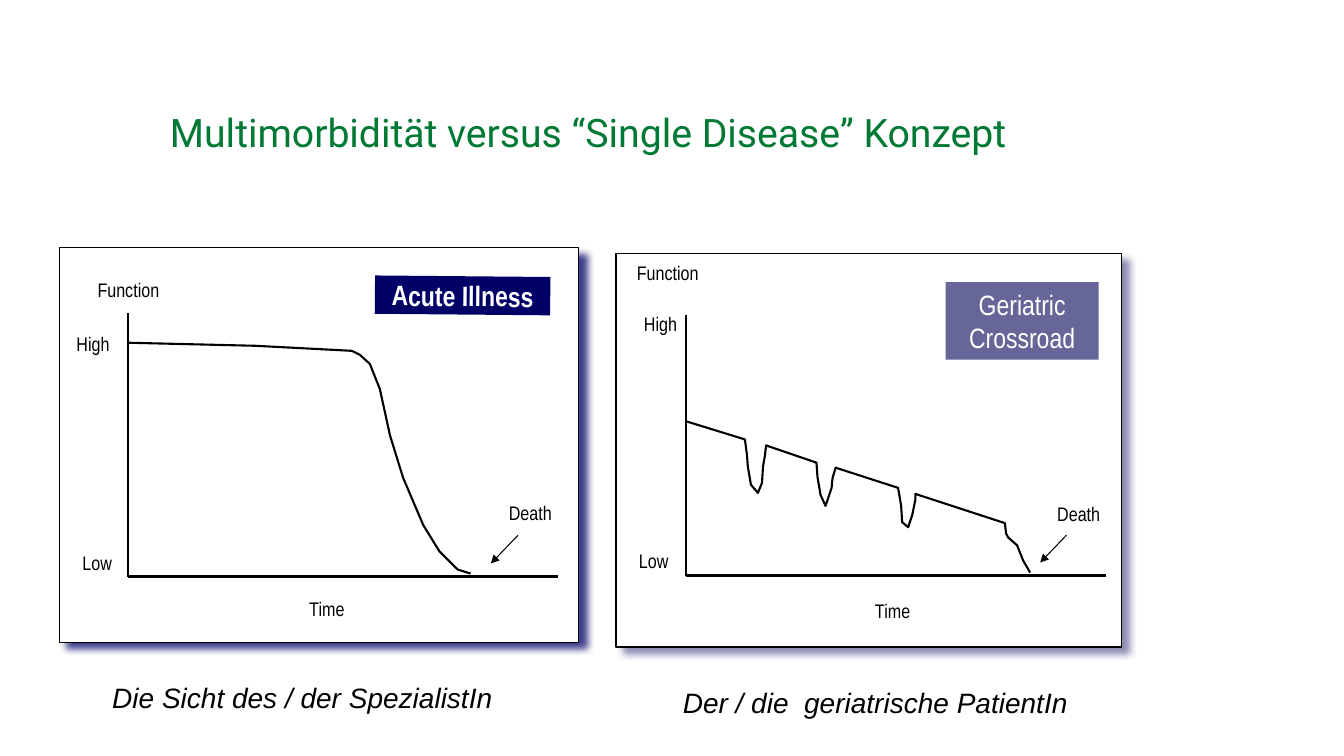
from pptx import Presentation
from pptx.dml.color import RGBColor
from pptx.enum.shapes import MSO_CONNECTOR, MSO_SHAPE
from pptx.enum.text import MSO_ANCHOR, PP_ALIGN
from pptx.oxml import parse_xml
from pptx.oxml.ns import nsdecls, qn
from pptx.util import Pt
from lxml import etree

RECT = MSO_SHAPE.RECTANGLE
STRAIGHT = MSO_CONNECTOR.STRAIGHT
CENTER, LEFT = PP_ALIGN.CENTER, PP_ALIGN.LEFT
TOP, MIDDLE = MSO_ANCHOR.TOP, MSO_ANCHOR.MIDDLE

COLORS = {"black": "000000", "white": "FFFFFF", "green": "007934",
          "navy": "000066", "violet": "666699"}


def set_text(sp, text, size, font, color, align=CENTER, anchor=TOP, wrap=True):
    tf = sp.text_frame
    tf.text = text
    tf.word_wrap = wrap
    tf.vertical_anchor = anchor
    p = tf.paragraphs[0]
    p.alignment = align
    r = p.runs[0]
    r.font.size = Pt(size)
    r.font.name = font
    r.font.color.rgb = RGBColor.from_string(COLORS[color])
    return r


def add_line(shapes, x1, y1, x2, y2, width):
    line = shapes.add_connector(STRAIGHT, Pt(x1), Pt(y1), Pt(x2), Pt(y2))
    line.line.color.rgb = RGBColor.from_string(COLORS["black"])
    line.line.width = Pt(width)
    etree.SubElement(line._element.spPr, qn("a:effectLst"))
    return line


prs = Presentation()
prs.slide_width, prs.slide_height = Pt(960), Pt(540)
s = prs.slides.add_slide(prs.slide_layouts[5])

# Title
title = s.shapes.title
title.left, title.top, title.width, title.height = Pt(68.4), Pt(72), Pt(703.4), Pt(43.2)
set_text(title, "Multimorbidität versus “Single Disease” Konzept", 28, "Roboto", "green",
         anchor=MIDDLE)
title.text_frame.paragraphs[0].line_spacing = Pt(34.8)

# The two charts of function over time: boxes are left, top, width, height
panels = [
    {"frame": (440, 181, 361.4, 281.2), "color": "violet",
     "axes": (490.3, 224.8, 411.1, 789.8),
     "curve": [(490.3, 301), (532.1, 313.9), (533.5, 324.7), (534.2, 333.4),
               (536.4, 346.3), (541.4, 352.1), (544.3, 344.9), (545, 333.4),
               (546.5, 324.7), (547.2, 318.2), (583.2, 330.5), (583.9, 340.6),
               (586.1, 353.5), (589.7, 361.4), (594, 348.5), (594.7, 341.3),
               (596.9, 334.1), (641.5, 348.5), (643.7, 361.4), (644.4, 373),
               (648.7, 376.6), (651.6, 367.9), (653.8, 357.1), (653.8, 352.8),
               (717.8, 373.7), (718.6, 381), (720, 383.8), (726.5, 389.5),
               (730.8, 400.3), (735.8, 409)],
     "labels": [("Function", 447.8, 182.9, 65.5), ("High", 452.9, 219.6, 42.5),
                ("Low", 449.3, 388.8, 39.6), ("Time", 617.8, 424.1, 44.6),
                ("Death", 748.1, 355, 50.4)],
     "arrow": (761.8, 382.3, 743, 401.8),
     "badge": ("Geriatric Crossroad", (675.4, 201.6, 109.4, 55.4), 0, False),
     "caption": ("Der / die  geriatrische PatientIn", (476.6, 486, 297.4, 31.7))},
    {"frame": (42.5, 177.1, 370.8, 281.5), "color": "navy",
     "axes": (91.4, 223.9, 411.8, 398.9),
     "curve": [(91.4, 244.8), (182.2, 247), (251.3, 250.6), (257, 253.4),
               (264.2, 259.9), (271.4, 277.9), (278.6, 311), (288, 341.3),
               (302.4, 375.1), (313.9, 393.8), (326.9, 406.8), (336.2, 409.7)],
     "labels": [("Function", 62.6, 195.1, 67.7), ("High", 47.5, 233.3, 43.9),
                ("Low", 51.8, 390.2, 41), ("Time", 213.8, 422.6, 45.4),
                ("Death", 356.4, 354.2, 51.8)],
     "arrow": (370.1, 382.3, 350.6, 402.5),
     "badge": ("Acute Illness", (267.8, 197.3, 125.3, 27.4), 0.5, True),
     "caption": ("Die Sicht des / der SpezialistIn", (61.9, 482.4, 308.2, 31.7))},
]

for panel in panels:
    shapes = s.shapes.add_group_shape().shapes

    # Frame with a coloured shadow
    frame = shapes.add_shape(RECT, *map(Pt, panel["frame"]))
    frame.fill.solid()
    frame.fill.fore_color.rgb = RGBColor.from_string(COLORS["white"])
    frame.line.color.rgb = RGBColor.from_string(COLORS["black"])
    frame.line.width = Pt(0.75)
    frame._element.spPr.append(parse_xml(
        f'<a:effectLst {nsdecls("a")}><a:outerShdw blurRad="{Pt(5)}" dist="{Pt(6.4)}" '
        f'dir="{39 * 60000}" algn="ctr" rotWithShape="0">'
        f'<a:srgbClr val="{COLORS[panel["color"]]}"><a:alpha val="75000"/></a:srgbClr>'
        '</a:outerShdw></a:effectLst>'))

    # Axes
    x, y_top, y_base, x_end = panel["axes"]
    add_line(shapes, x, y_top, x, y_base, 1.5)
    add_line(shapes, x, y_base, x_end, y_base, 1.5)

    # Function curve
    points = [(Pt(px), Pt(py)) for px, py in panel["curve"]]
    builder = shapes.build_freeform(*points[0])
    builder.add_line_segments(points[1:], close=False)
    curve = builder.convert_to_shape()
    curve.shadow.inherit = False
    curve.fill.background()
    curve.line.color.rgb = RGBColor.from_string(COLORS["black"])
    curve.line.width = Pt(1.5)

    # Labels
    for text, left, top, width in panel["labels"]:
        label = shapes.add_textbox(Pt(left), Pt(top), Pt(width), Pt(28.8))
        set_text(label, text, 14, "Arial Narrow", "black", LEFT, wrap=False)

    # Arrow from the word Death to the end of the curve
    arrow = add_line(shapes, *panel["arrow"], 0.75)
    etree.SubElement(arrow.line._get_or_add_ln(), qn("a:tailEnd"), type="triangle")

    # Badge
    text, box, rotation, bold = panel["badge"]
    badge = shapes.add_shape(RECT, *map(Pt, box))
    badge.rotation = rotation
    badge.shadow.inherit = False
    badge.fill.solid()
    badge.fill.fore_color.rgb = RGBColor.from_string(COLORS[panel["color"]])
    badge.line.fill.background()
    tf = badge.text_frame
    tf.margin_top = tf.margin_bottom = 0
    set_text(badge, text, 20, "Arial Narrow", "white", anchor=MIDDLE).font.bold = bold

    # Caption under the frame
    text, box = panel["caption"]
    caption = s.shapes.add_textbox(*map(Pt, box))
    set_text(caption, text, 20, "Arial", "black").font.italic = True

prs.save("out.pptx")
